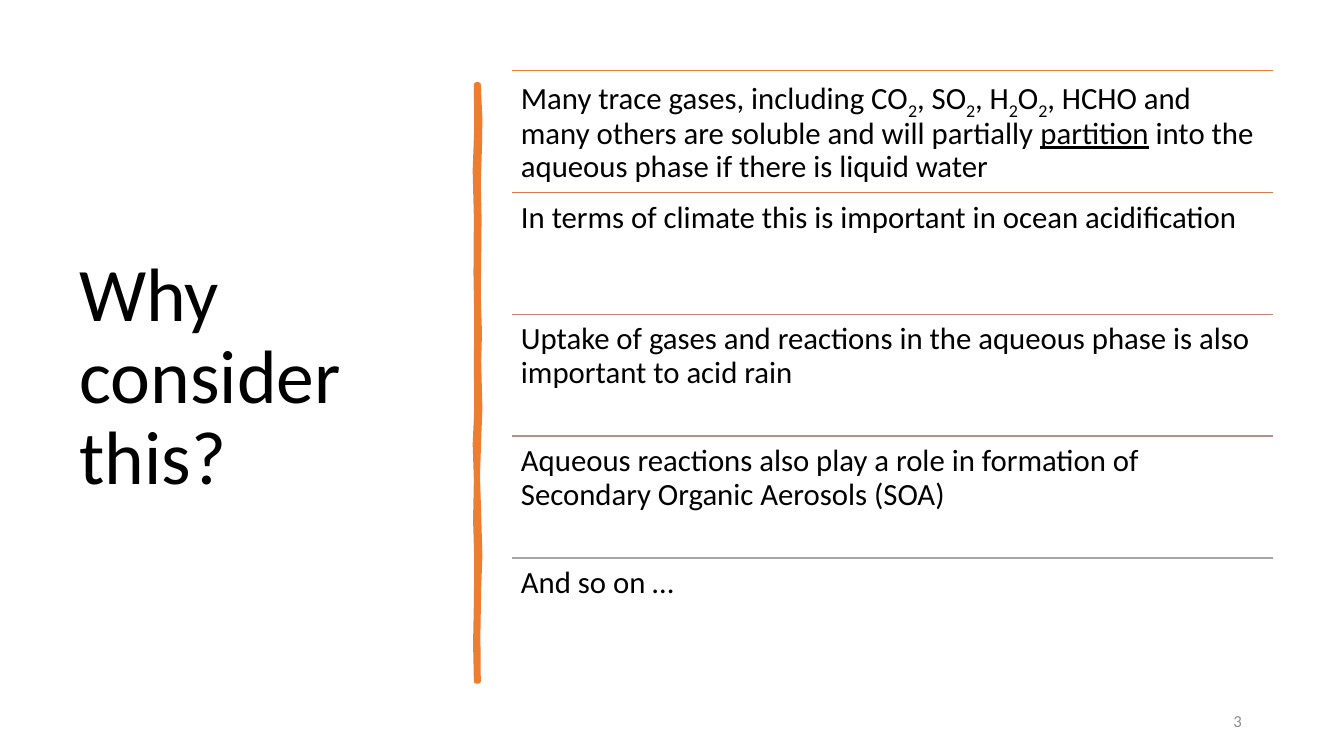
import pptx
import pptx.util
import pptx.dml.color
import pptx.enum.shapes
import pptx.enum.text
import lxml.etree

Cm = pptx.util.Cm
Pt = pptx.util.Pt
align = pptx.enum.text.PP_ALIGN
anchor = pptx.enum.text.MSO_ANCHOR


def hue(code):
    return pptx.dml.color.RGBColor.from_string(code)


def write(box, parts, size, color="000000"):
    frame = box.text_frame
    frame.word_wrap = True
    para = frame.paragraphs[0]
    for part in parts:
        run = para.add_run()
        run.text = part
        run.font.name = "Calibri"
        run.font.size = Pt(size)
        run.font.color.rgb = hue(color)
    return para


deck = pptx.Presentation()
deck.slide_width = Cm(33.87)
deck.slide_height = Cm(19.05)
slide = deck.slides.add_slide(deck.slide_layouts[6])
shapes = slide.shapes

title = shapes.add_textbox(Cm(1.75), Cm(1.78), Cm(9.5), Cm(15.52))
title.text_frame.vertical_anchor = anchor.MIDDLE
para = write(title, ["Why consider this?"], 54)
para.line_spacing = 0.9

right = [(12.06, 2.13), (12.1, 3), (12.09, 3.7), (12.06, 4.6), (12.08, 5.5),
         (12.06, 7.47), (12.09, 8.4), (12.07, 9.1), (12.1, 10.3), (12.07, 11.07),
         (12.04, 12), (12.07, 12.95), (12.1, 14), (12.07, 14.83), (12.05, 16),
         (12.06, 17.17)]
left = [(12, 17.17), (11.98, 16.2), (12, 15.2), (12.01, 14.1), (11.98, 13.1),
        (12, 12.1), (11.97, 11.2), (12.01, 10.3), (12, 9.2), (12.01, 8),
        (11.99, 6.9), (12, 5.5), (11.97, 4.3), (12.01, 3.2), (12, 2.13)]
points = [(Cm(x), Cm(y)) for x, y in right + left]
pen = shapes.build_freeform(*points[0])
pen.add_line_segments(points[1:], close=True)
bar = pen.convert_to_shape()
bar.shadow.inherit = False
bar.fill.solid()
bar.fill.fore_color.rgb = hue("ED7D31")
bar.line.color.rgb = hue("ED7D31")
bar.line.width = Pt(3.25)

number = shapes.add_textbox(Cm(23.93), Cm(17.65), Cm(7.62), Cm(1.02))
number.text_frame.vertical_anchor = anchor.MIDDLE
para = write(number, ["3"], 12, "8C8C8C")
para.alignment = align.RIGHT
para.space_after = Pt(6)

rows = [
    ("ED7D31", ["Many trace gases, including CO", "2", ", SO", "2", ", H", "2", "O", "2",
                ", HCHO and many others are soluble and will partially ", "partition",
                " into the aqueous phase if there is liquid water"]),
    ("D87A51", ["In terms of climate this is important in ocean acidification"]),
    ("C48170", ["Uptake of gases and reactions in the aqueous phase is also "
                "important to acid rain"]),
    ("B4908B", ["Aqueous reactions also play a role in formation of "
                "Secondary Organic Aerosols (SOA)"]),
    ("A5A5A5", ["And so on …"]),
]
start, width, step = Cm(12.9), Cm(19.18), Cm(3.07)
for index, (color, parts) in enumerate(rows):
    top = Cm(1.78) + index * step
    rule = shapes.add_connector(pptx.enum.shapes.MSO_CONNECTOR.STRAIGHT,
                                start, top, start + width, top)
    rule.line.color.rgb = hue(color)
    rule.line.width = Pt(1)
    lxml.etree.SubElement(rule._element.spPr, pptx.oxml.ns.qn("a:effectLst"))

    box = shapes.add_textbox(start, top, width, step)
    frame = box.text_frame
    frame.margin_left = frame.margin_right = Cm(0.23)
    frame.margin_top = frame.margin_bottom = Cm(0.23)
    para = write(box, parts, 22)
    para.line_spacing = 0.9
    for run in para.runs:
        if run.text == "2":
            run.font._element.set("baseline", "-25000")
        elif run.text == "partition":
            run.font.underline = True

deck.save("out.pptx")
